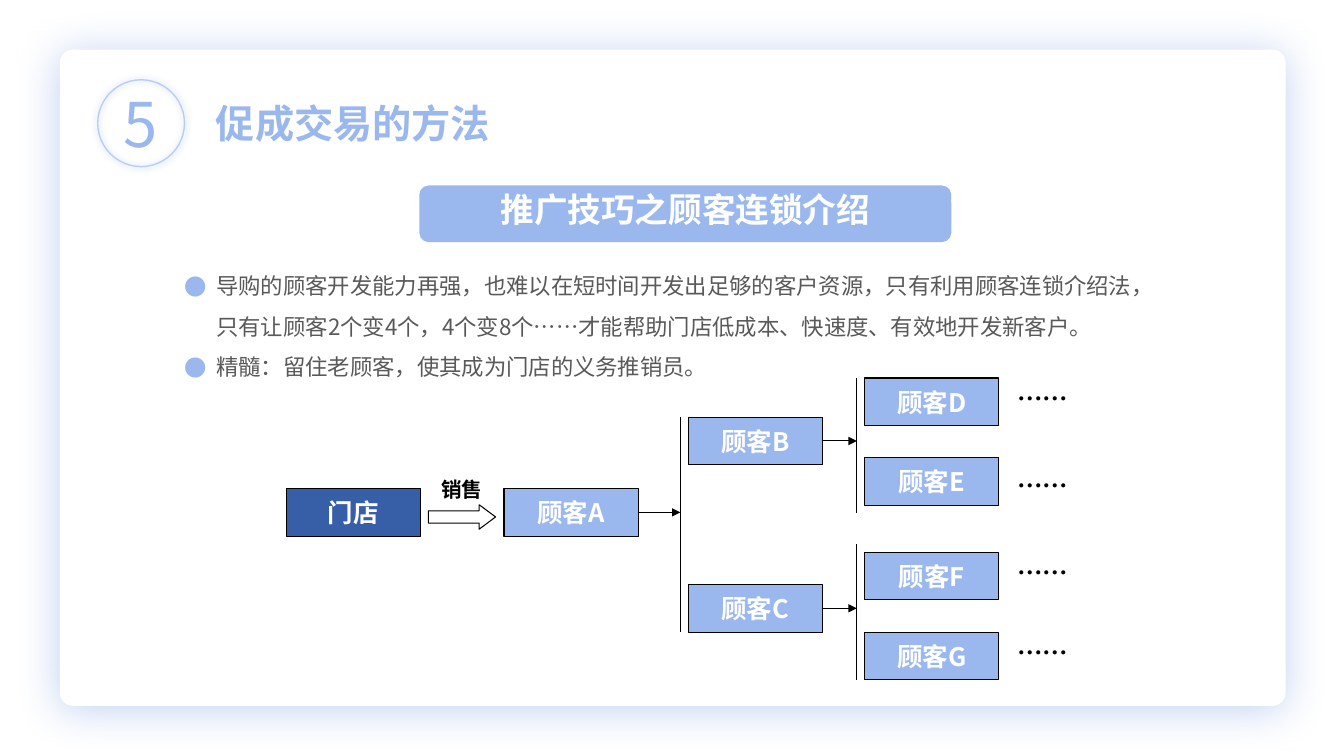
"""Build a slide on winning new customers through chained referrals."""
import pptx
import pptx.dml.color
import pptx.enum.shapes
import pptx.enum.text
import pptx.oxml
import pptx.oxml.ns
import pptx.util
from lxml import etree

Pt = pptx.util.Pt
SHAPE = pptx.enum.shapes.MSO_SHAPE
STRAIGHT = pptx.enum.shapes.MSO_CONNECTOR.STRAIGHT
ANCHOR = pptx.enum.text.MSO_ANCHOR
ALIGN = pptx.enum.text.PP_ALIGN
qn = pptx.oxml.ns.qn
FONT = "Noto Sans CJK SC"
COLORS = {
    "white": "FFFFFF", "black": "000000", "body": "595959",
    "light": "9AB8EE", "dark": "375FA7", "ring": "B8CEF7",
    "card_shadow": "6891E1", "ring_shadow": "3F78E2",
}


def write(shape, lines, size, color, bold=False, align=ALIGN.CENTER, anchor=ANCHOR.TOP, wrap=True):
    """Fill a shape with evenly styled paragraphs."""
    frame = shape.text_frame
    frame.text = "\n".join(lines)
    frame.auto_size = pptx.enum.text.MSO_AUTO_SIZE.NONE
    frame.word_wrap = wrap
    frame.vertical_anchor = anchor
    for paragraph in frame.paragraphs:
        paragraph.alignment = align
        font = paragraph.font
        font.name, font.size, font.bold = FONT, Pt(size), bold
        font.color.rgb = pptx.dml.color.RGBColor.from_string(COLORS[color])
        defaults = paragraph._p.pPr.find(qn("a:defRPr"))
        etree.SubElement(defaults, qn("a:ea"), typeface=FONT)


def draw(kind, box, fill=None, line=None, width=0.75, shadow=None):
    """Add a preset shape, with an optional (colour, blur, distance) shadow."""
    shape = slide.shapes.add_shape(kind, *map(Pt, box))
    shape.shadow.inherit = False
    if fill:
        shape.fill.solid()
        shape.fill.fore_color.rgb = pptx.dml.color.RGBColor.from_string(COLORS[fill])
    else:
        shape.fill.background()
    if line:
        shape.line.color.rgb = pptx.dml.color.RGBColor.from_string(COLORS[line])
        shape.line.width = Pt(width)
    else:
        shape.line.fill.background()
    if shadow:
        color, blur, distance = shadow
        effects = shape.element.spPr.find(qn("a:effectLst"))
        outer = etree.SubElement(effects, qn("a:outerShdw"), blurRad=str(Pt(blur)),
                                 dist=str(Pt(distance)), dir="5400000", algn="ctr", rotWithShape="0")
        tint = etree.SubElement(outer, qn("a:srgbClr"), val=COLORS[color])
        etree.SubElement(tint, qn("a:alpha"), val="40000")
    return shape


presentation = pptx.Presentation()
presentation.slide_width, presentation.slide_height = Pt(960), Pt(540)
slide = presentation.slides.add_slide(presentation.slide_layouts[1])
title, body = slide.placeholders

card = draw(SHAPE.ROUNDED_RECTANGLE, (42.8, 35.5, 875.5, 468.7), "white",
            shadow=("card_shadow", 30, 3))
card.adjustments[0] = 0.02
card.element.getparent().insert(2, card.element)

draw(SHAPE.OVAL, (69.8, 57, 62, 62), line="ring", width=1, shadow=("ring_shadow", 5, 0))
number = slide.shapes.add_textbox(Pt(75.8), Pt(57.6), Pt(49), Pt(60.5))
write(number, ["5"], 44, "light")

title.left, title.top, title.width, title.height = map(Pt, (147, 67, 322, 41))
write(title, ["促成交易的方法"], 28, "light", True, ALIGN.LEFT)

banner = draw(SHAPE.ROUNDED_RECTANGLE, (299.5, 132.5, 380, 40.5), "light")
write(banner, ["推广技巧之顾客连锁介绍"], 24, "white", True)
banner.text_frame.paragraphs[0].line_spacing = 0.9

body.left, body.top, body.width, body.height = map(Pt, (124.8, 181.5, 718.5, 94.5))
write(body, [
    "导购的顾客开发能力再强，也难以在短时间开发出足够的客户资源，只有利用顾客连锁介绍法，"
    "只有让顾客2个变4个，4个变8个……才能帮助门店低成本、快速度、有效地开发新客户。",
    "精髓：留住老顾客，使其成为门店的义务推销员。",
], 16, "body", align=ALIGN.LEFT)
for paragraph in body.text_frame.paragraphs:
    paragraph.line_spacing = 1.5
    paragraph.space_before = Pt(0)
    properties = paragraph._p.pPr
    properties.set("marL", str(Pt(22.5)))
    properties.set("indent", str(-Pt(22.5)))
    defaults = properties.find(qn("a:defRPr"))
    bullet_color = etree.Element(qn("a:buClr"))
    etree.SubElement(bullet_color, qn("a:srgbClr"), val=COLORS["light"])
    defaults.addprevious(bullet_color)
    defaults.addprevious(etree.Element(qn("a:buFont"), typeface=FONT))
    defaults.addprevious(etree.Element(qn("a:buChar"), char="●"))

BOX_WIDTH, BOX_HEIGHT = 96, 34
nodes = {}
for name, left, top in [
    ("门店", 204.5, 349), ("顾客A", 360, 349),
    ("顾客B", 491.5, 298), ("顾客C", 491.5, 417.5),
    ("顾客D", 617.5, 270), ("顾客E", 617.5, 327),
    ("顾客F", 617.5, 394.5), ("顾客G", 617.5, 451.5),
]:
    node = draw(SHAPE.RECTANGLE, (left, top, BOX_WIDTH, BOX_HEIGHT),
                "dark" if name == "门店" else "light", "black")
    write(node, [name], 18.2, "white", True, anchor=ANCHOR.MIDDLE, wrap=False)
    nodes[name] = node

sale_arrow = draw(SHAPE.RIGHT_ARROW, (306, 360.5, 48, 17.5), line="black")
sale_arrow.adjustments[1] = 0.67
sale_label = slide.shapes.add_textbox(Pt(282), Pt(332.5), Pt(BOX_WIDTH), Pt(BOX_HEIGHT))
write(sale_label, ["销售"], 14.7, "black", True, anchor=ANCHOR.MIDDLE, wrap=False)

for source, bar_left, bar_top, bar_bottom in [
    ("顾客A", 486, 298, 451.5), ("顾客B", 612, 270, 366.5), ("顾客C", 612, 388.5, 485.5),
]:
    node = nodes[source]
    middle = node.top + node.height // 2
    bar = slide.shapes.add_connector(STRAIGHT, Pt(bar_left), Pt(bar_top), Pt(bar_left), Pt(bar_bottom))
    arrow = slide.shapes.add_connector(STRAIGHT, node.left + node.width, middle, Pt(bar_left), middle)
    arrow.begin_connect(node, 3)
    for connector in (bar, arrow):
        connector.line.width = Pt(0.75)
        connector.line.color.rgb = pptx.dml.color.RGBColor.from_string(COLORS["black"])
        etree.SubElement(connector.element.spPr, qn("a:effectLst"))
    etree.SubElement(arrow.line._get_or_add_ln(), qn("a:tailEnd"), type="triangle")

for top in (270, 332.5, 394.5, 451.5):
    more = slide.shapes.add_textbox(Pt(719.5), Pt(top), Pt(78), Pt(29.5))
    write(more, ["……"], 18.2, "black", True, ALIGN.LEFT)

presentation.save("out.pptx")
